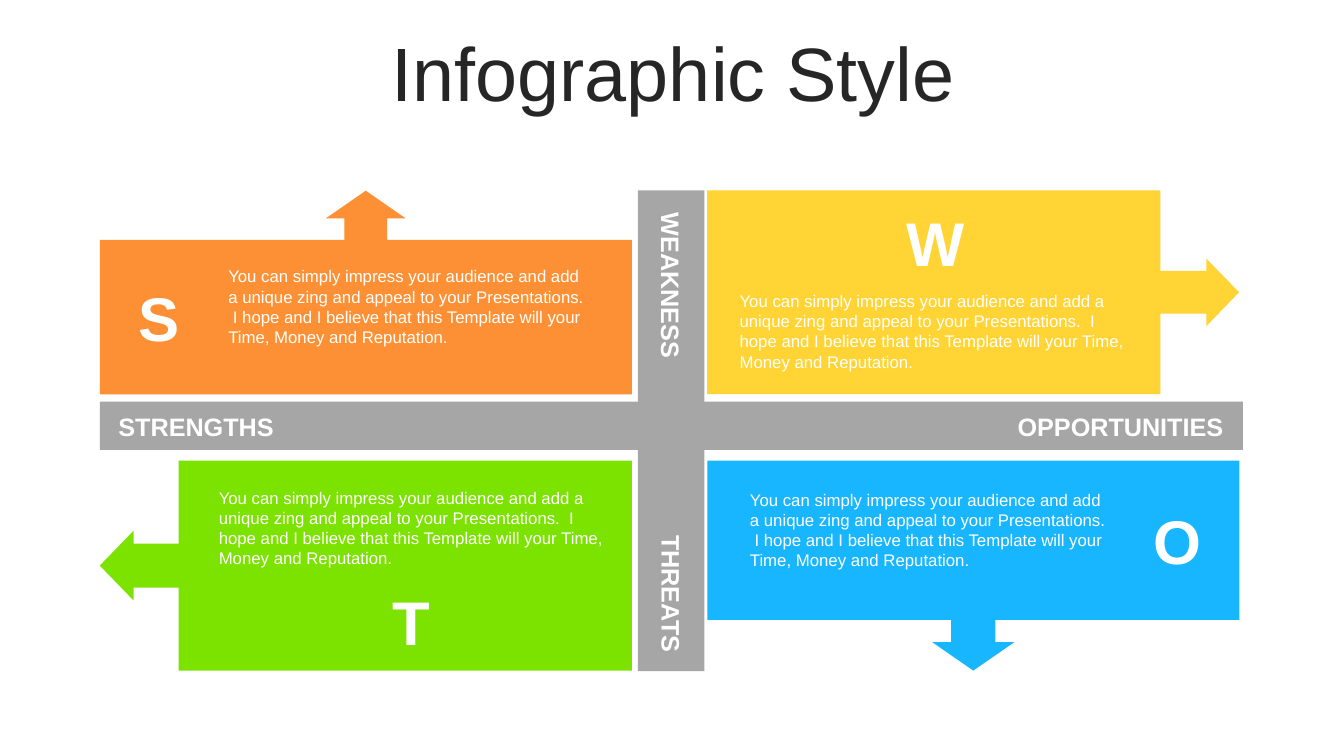
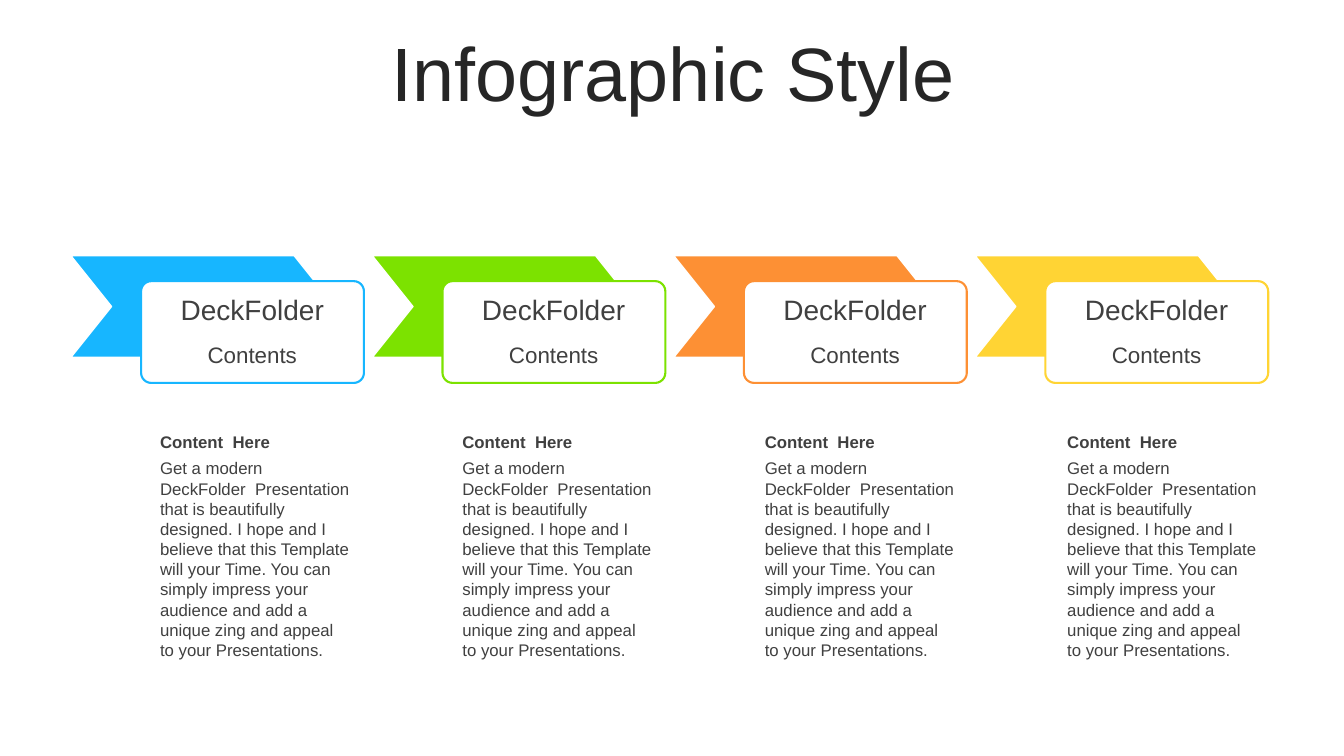
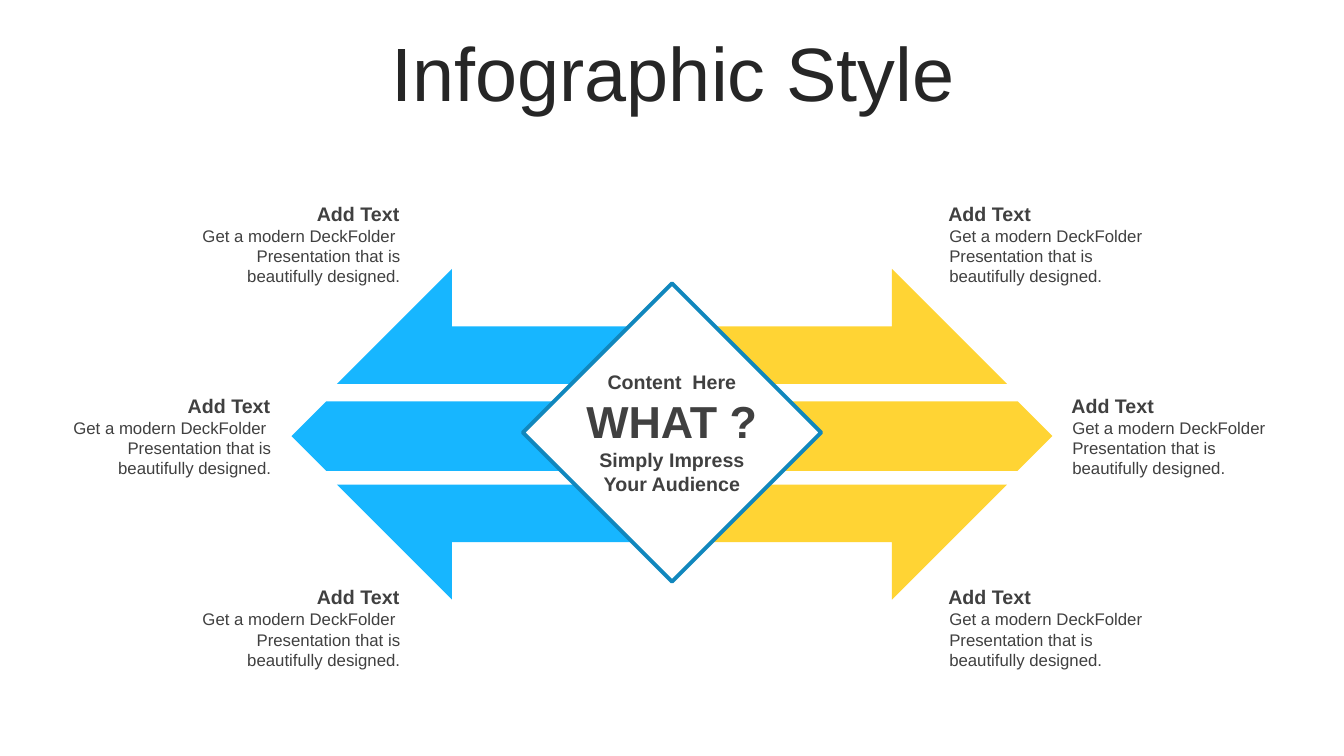
import pptx
import pptx.util
import pptx.dml.color
import pptx.enum.shapes
import pptx.enum.text

Pt = pptx.util.Pt
Kind = pptx.enum.shapes.MSO_SHAPE
Align = pptx.enum.text.PP_ALIGN
Anchor = pptx.enum.text.MSO_ANCHOR
Rgb = pptx.dml.color.RGBColor.from_string

# Shared look
HUES = {"blue": "17B6FF", "green": "7CE200", "orange": "FD9034", "yellow": "FFD434",
        "gray": "A6A6A6", "white": "FFFFFF", "edge": "1187BD",
        "text": "404040", "title": "262626"}
FONT = "Arial"


def paint(shape, fill, line=None, width=1, turn=0):
    shape.shadow.inherit = False
    shape.fill.solid()
    shape.fill.fore_color.rgb = Rgb(HUES[fill])
    if line:
        shape.line.color.rgb = Rgb(HUES[line])
        shape.line.width = Pt(width)
    else:
        shape.line.fill.background()
    shape.rotation = turn


def write(slide, words, box, size, hue="text", bold=False,
          align=Align.LEFT, anchor=Anchor.TOP, turn=0):
    label = slide.shapes.add_textbox(*map(Pt, box))
    label.rotation = turn
    frame = label.text_frame
    frame.word_wrap = True
    frame.vertical_anchor = anchor
    frame.text = words
    for para in frame.paragraphs:
        para.alignment = align
        font = para.runs[0].font
        font.name, font.size, font.bold = FONT, Pt(size), bold
        font.color.rgb = Rgb(HUES[hue])


# Three slides with the same title
deck = pptx.Presentation()
deck.slide_width, deck.slide_height = Pt(960), Pt(540)
slides = []
for _ in range(3):
    slide = deck.slides.add_slide(deck.slide_layouts[5])
    title = slide.shapes.title
    title.left, title.top, title.width, title.height = map(Pt, (25.2, 26.6, 911.5, 56.9))
    frame = title.text_frame
    frame.text = "Infographic Style"
    frame.auto_size = pptx.enum.text.MSO_AUTO_SIZE.NONE
    frame.vertical_anchor = Anchor.MIDDLE
    para = frame.paragraphs[0]
    para.alignment = Align.CENTER
    para.line_spacing = 0.9
    para.space_before = Pt(10)
    font = para.runs[0].font
    font.name, font.size = FONT, Pt(54)
    font.color.rgb = Rgb(HUES["title"])
    slides.append(slide)
swot, steps, what = slides

# Slide 1: gray cross
for box in ((455.6, 136, 47.5, 343.5), (71.3, 286.8, 816.5, 34.5)):
    paint(swot.shapes.add_shape(Kind.RECTANGLE, *map(Pt, box)), "gray")

# Slide 1: arrow panels with letter and text
pitch = ("You can simply impress your audience and add a unique zing and appeal to your "
         "Presentations.  I hope and I believe that this Template will your Time, "
         "Money and Reputation.")
flat = (0.21, 0.196, 0.136, 0.759)
tall = (0.21, 0.166, 0.161, 0.852)
panels = [
    ("S", "orange", (71.3, 136.2, 380, 145.5), 0, flat, (88.6, 196.6), (156, 186.6, 269.3)),
    ("O", "blue", (505.2, 329, 380, 150), 180, flat, (816.5, 355.7), (528.6, 346, 269.3)),
    ("W", "yellow", (622.3, 18.8, 145.5, 380), 90, tall, (640.2, 142.8), (521.2, 204.2, 289.4)),
    ("T", "green", (186.3, 214, 150, 380), 270, tall, (269.3, 413.3), (149.2, 344.8, 289.4)),
]
for letter, hue, box, turn, ratios, spot, area in panels:
    panel = swot.shapes.add_shape(Kind.UP_ARROW_CALLOUT, *map(Pt, box))
    for i, ratio in enumerate(ratios):
        panel.adjustments[i] = ratio
    paint(panel, hue, turn=turn)
    write(swot, pitch, (*area, 65.5), 12, "white")
    write(swot, letter, (*spot, 49.7, 60.5), 44, "white", True, Align.CENTER)

# Slide 1: labels on the cross
for word, left, top, width, align, turn in (
        ("STRENGTHS", 77.5, 290.2, 147.6, Align.LEFT, 0),
        ("WEAKNESS", 410.9, 198.7, 136.8, Align.LEFT, 90),
        ("OPPORTUNITIES", 695.1, 290.2, 185.8, Align.RIGHT, 0),
        ("THREATS", 418.5, 397.4, 122.4, Align.RIGHT, 90)):
    write(swot, word, (left, top, width, 28.8), 18, "white", True, align, turn=turn)

# Slide 2: chevron, card and text in four columns
story = ("Get a modern DeckFolder  Presentation that is beautifully designed. I hope and I "
         "believe that this Template will your Time. You can simply impress your audience "
         "and add a unique zing and appeal to your Presentations.")
for i, hue in enumerate(("blue", "green", "orange", "yellow")):
    x = 215.3 * i
    arrow = steps.shapes.add_shape(Kind.CHEVRON, Pt(50.6 + x), Pt(182.6), Pt(188.6), Pt(72.7))
    arrow.adjustments[0] = 0.4
    paint(arrow, hue, "white")
    card = steps.shapes.add_shape(Kind.ROUNDED_RECTANGLE, Pt(100.8 + x), Pt(200.8),
                                  Pt(159.2), Pt(72.7))
    card.adjustments[0] = 0.1
    paint(card, "white", hue, 1.5)
    write(steps, "DeckFolder", (105.3 + x, 205.6, 149.8, 31.7), 20, align=Align.CENTER)
    write(steps, "Contents", (105.3 + x, 240.5, 149.8, 26.6), 16, align=Align.CENTER)
    x = 107.2 + 216 * i
    write(steps, "Content  Here", (x, 304.6, 150.5, 21.6), 12, bold=True, anchor=Anchor.MIDDLE)
    write(steps, story, (x, 323.7, 150.5, 152.6), 12)

# Slide 3: arrows mirrored about the centre
midx, midy = 480, 310.2
half = [(157.2, -118.1), (239.3, -36), (14.8, -36), (14.8, -77), (157.2, -77)]
for side, hue, left, turn in ((1, "yellow", 494.8, 0), (-1, "blue", 208.2, 180)):
    for way in (1, -1):
        points = [(Pt(midx + side * x), Pt(midy + way * y)) for x, y in half]
        build = what.shapes.build_freeform(*points[0])
        build.add_line_segments(points[1:])
        paint(build.convert_to_shape(), hue)
    plate = what.shapes.add_shape(Kind.PENTAGON, Pt(left), Pt(286.6), Pt(257), Pt(49.7))
    paint(plate, hue, turn=turn)

# Slide 3: diamond with its text
gem = what.shapes.add_shape(Kind.DIAMOND, Pt(373.5), Pt(202.4), Pt(213.1), Pt(213.1))
paint(gem, "white", "edge", 2.75)
for words, box, size in (
        ("WHAT ?", (393.1, 277.2, 173.5, 46.1), 32),
        ("Content  Here", (400.8, 260.6, 158.4, 24.5), 14),
        ("Simply Impress\nYour Audience", (400.8, 316.4, 158.4, 41), 14)):
    write(what, words, box, size, bold=True, align=Align.CENTER, anchor=Anchor.MIDDLE)

# Slide 3: notes beside the arrow tips
note = "Get a modern DeckFolder  Presentation that is beautifully designed."
for align, outer, inner in ((Align.RIGHT, 136.2, 44), (Align.LEFT, 670.3, 758.2)):
    for x, y in ((outer, 140.4), (inner, 277.5), (outer, 414.4)):
        write(what, "Add Text", (x, y, 156.2, 24.5), 14, bold=True, align=align)
        write(what, note, (x + 0.7, y + 17.2, 156.2, 51.1), 12, align=align)

deck.save("out.pptx")
